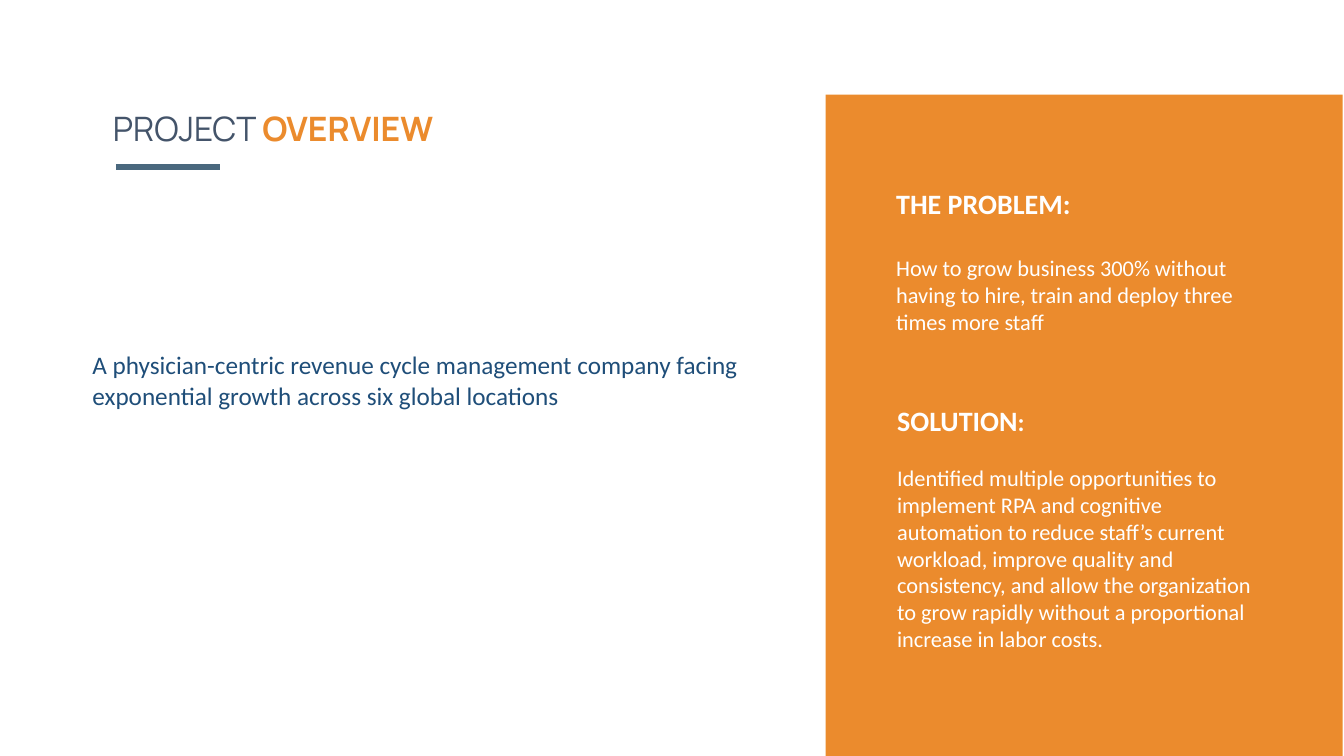
from lxml.etree import SubElement
from pptx import Presentation
from pptx.dml.color import RGBColor
from pptx.enum.shapes import MSO_CONNECTOR as Connector, MSO_SHAPE as Shape
from pptx.enum.text import MSO_ANCHOR as Anchor, MSO_AUTO_SIZE as AutoSize, PP_ALIGN as Align
from pptx.oxml.ns import qn
from pptx.util import Pt

ORANGE = RGBColor(0xEB, 0x8B, 0x2D)
SLATE = RGBColor(0x44, 0x54, 0x6A)
STEEL = RGBColor(0x4A, 0x68, 0x7E)
NAVY = RGBColor(0x1F, 0x4E, 0x79)
WHITE = RGBColor(0xFF, 0xFF, 0xFF)


def set_frame(box, inset_x, inset_y, auto_size):
    frame = box.text_frame
    settings = {
        "word_wrap": True, "auto_size": auto_size, "vertical_anchor": Anchor.TOP,
        "margin_left": Pt(inset_x), "margin_right": Pt(inset_x),
        "margin_top": Pt(inset_y), "margin_bottom": Pt(inset_y),
    }
    for name, value in settings.items():
        setattr(frame, name, value)
    return frame


def add_span(para, text, size, color, bold=False, name="Calibri"):
    span = para.add_run()
    span.text = text
    for key, value in {"size": Pt(size), "bold": bold, "name": name}.items():
        setattr(span.font, key, value)
    span.font.color.rgb = color


def add_title(page, left, top, width, height):
    title = page.shapes.title
    position = {"left": left, "top": top, "width": width, "height": height}
    for name, value in position.items():
        setattr(title, name, Pt(value))
    para = set_frame(title, 7.2, 3.6, AutoSize.NONE).paragraphs[0]
    para.alignment = Align.LEFT
    add_span(para, "PROJECT ", 24, SLATE, name="Manrope")
    add_span(para, "OVERVIEW", 24, ORANGE, True, "Manrope")

    line_left, line_top = left + 9.4, top + 46.1
    underline = page.shapes.add_connector(
        Connector.STRAIGHT, Pt(line_left), Pt(line_top), Pt(line_left + 74.2), Pt(line_top))
    underline.line.color.rgb = STEEL
    underline.line.width = Pt(4.5)
    SubElement(underline._element.spPr, qn("a:effectLst"))


def add_summary(page, left, top, width, height):
    box = page.shapes.add_textbox(Pt(left), Pt(top), Pt(width), Pt(height))
    frame = set_frame(box, 7.2, 3.6, AutoSize.SHAPE_TO_FIT_TEXT)
    add_span(frame.paragraphs[0],
             "A physician-centric revenue cycle management company facing "
             "exponential growth across six global locations", 18, NAVY)


def add_section(page, left, top, heading, body, gap):
    box = page.shapes.add_textbox(Pt(left), Pt(top), Pt(274.3), Pt(25.9))
    frame = set_frame(box, 4.3, 4.3, AutoSize.NONE)
    for text, size in heading:
        add_span(frame.paragraphs[0], text, size, WHITE, True)
    para = frame.add_paragraph()
    para.space_before = Pt(gap)
    add_span(para, body, 16, WHITE)


def add_panel(page, left, top, width, height):
    panel = page.shapes.add_shape(Shape.RECTANGLE, Pt(left), Pt(top), Pt(width), Pt(height))
    panel.shadow.inherit = False
    panel.fill.solid()
    panel.fill.fore_color.rgb = ORANGE
    panel.line.fill.background()
    add_section(page, left + 46.1, top + 61.2, [("THE PROBLEM:", 20)],
                "How to grow business 300% without having to hire, train and deploy "
                "three times more staff", 24.4)
    add_section(page, left + 46.8, top + 216, [("SOLUTION", 20), (":", 18)],
                "Identified multiple opportunities to implement RPA and cognitive automation "
                "to reduce staff’s current workload, improve quality and consistency, and "
                "allow the organization to grow rapidly without a proportional increase in "
                "labor costs.", 19.5)


def main():
    deck = Presentation()
    deck.slide_width, deck.slide_height = Pt(960), Pt(540)
    page = deck.slides.add_slide(deck.slide_layouts[5])
    add_panel(page, 589.7, 67.7, 369.4, 472.3)
    add_title(page, 73.4, 73.4, 464.4, 36)
    add_summary(page, 59, 246.2, 501.8, 51.1)
    deck.save("out.pptx")


if __name__ == "__main__":
    main()
